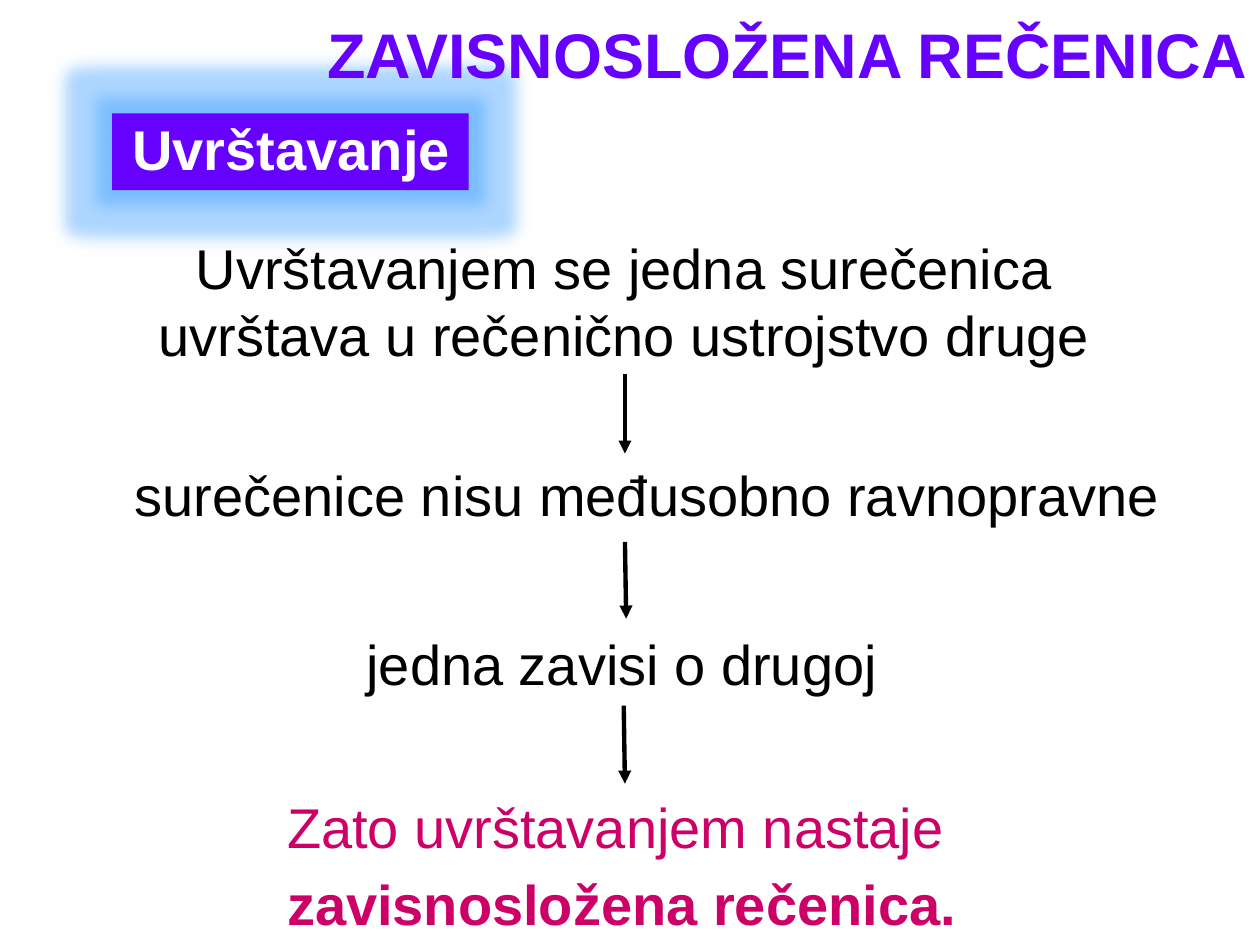
from lxml import etree
from pptx import Presentation
from pptx import util as u
from pptx.dml.color import RGBColor
from pptx.enum import shapes, text
from pptx.oxml import ns

THEME = {
    "font": "Arial", "head": 36, "body": 32, "line": 2.5,
    "violet": "6600FF", "white": "FFFFFF", "black": "000000",
    "pink": "CC0066", "glow": "3399FF",
}
WIDE, HIGH = 10, 7.5
LEFT, MID, TOP, BASE = (text.PP_ALIGN.LEFT, text.PP_ALIGN.CENTER,
                        text.MSO_ANCHOR.TOP, text.MSO_ANCHOR.BOTTOM)
RIGHT = text.PP_ALIGN.RIGHT

# runs (words, bold), box, size, colour, align, anchor, line spacing
TEXTS = [
    ([("ZAVISNOSLOŽENA REČENICA", True)],
     (2.23, 0.02, 7.77, 0.76), "head", "violet", RIGHT, BASE, 0.9),
    ([("Uvrštavanje", True)],
     (0.98, 0.64, 5.94, 0.84), "body", "white", LEFT, BASE, 1),
    ([("Uvrštavanjem se jedna surečenica uvrštava u rečenično "
       "ustrojstvo druge", False)],
     (0.97, 1.8, 7.97, 1.18), "body", "black", MID, TOP, 1),
    ([("surečenice nisu međusobno ravnopravne", False)],
     (0.97, 3.61, 8.57, 0.64), "body", "black", LEFT, TOP, 1),
    ([("jedna zavisi o drugoj", False)],
     (2.81, 4.95, 5.18, 0.64), "body", "black", LEFT, TOP, 1),
    ([("Zato uvrštavanjem nastaje ", False),
      ("zavisnosložena rečenica.", True)],
     (2.18, 6.16, 7.97, 1.29), "body", "pink", LEFT, TOP, 1.15),
]
LABEL = (0.89, 0.9, 2.83, 0.61)
ARROWS = [(4.96, 2.97, 4.96, 3.6), (4.96, 4.3, 4.97, 4.91),
          (4.95, 5.6, 4.96, 6.22)]


def inch(box):
    return [u.Inches(n) for n in box]


def tint(name):
    return RGBColor.from_string(THEME[name])


def node(up, tag, **atts):
    return etree.SubElement(up, ns.qn(tag), **atts)


def add_label(slide):
    """Add the violet bar with its soft blue glow."""
    bar = slide.shapes.add_shape(shapes.MSO_SHAPE.RECTANGLE, *inch(LABEL))
    bar.shadow.inherit = False
    bar.fill.solid()
    bar.fill.fore_color.rgb = tint("violet")
    bar.line.fill.background()
    halo = node(bar.element.spPr.find(ns.qn("a:effectLst")), "a:glow",
                rad=str(u.Inches(0.25)))
    hue = node(halo, "a:srgbClr", val=THEME["glow"])
    node(hue, "a:alpha", val="40000")


def add_words(slide, runs, box, size, hue, align, anchor, gap):
    frame = slide.shapes.add_textbox(*inch(box)).text_frame
    frame.word_wrap = True
    frame.vertical_anchor = anchor
    if anchor == BASE and align == LEFT:
        frame.margin_left = frame.margin_right = u.Inches(0.07)
        frame.margin_top = frame.margin_bottom = u.Inches(0.04)
    para = frame.paragraphs[0]
    para.alignment = align
    para.line_spacing = gap
    for words, bold in runs:
        run = para.add_run()
        run.text = words
        run.font.name = THEME["font"]
        run.font.size = u.Pt(THEME[size])
        run.font.bold = bold
        run.font.color.rgb = tint(hue)


def add_arrow(slide, ends):
    line = slide.shapes.add_connector(shapes.MSO_CONNECTOR.STRAIGHT,
                                      *inch(ends))
    line.line.width = u.Pt(THEME["line"])
    line.line.color.rgb = tint("black")
    node(line.line._get_or_add_ln(), "a:tailEnd", type="triangle")
    node(line.element.spPr, "a:effectLst")


def main():
    deck = Presentation()
    deck.slide_width, deck.slide_height = inch((WIDE, HIGH))
    slide = deck.slides.add_slide(deck.slide_layouts[6])
    add_label(slide)
    for row in TEXTS:
        add_words(slide, *row)
    for ends in ARROWS:
        add_arrow(slide, ends)
    deck.save("out.pptx")


if __name__ == "__main__":
    main()
